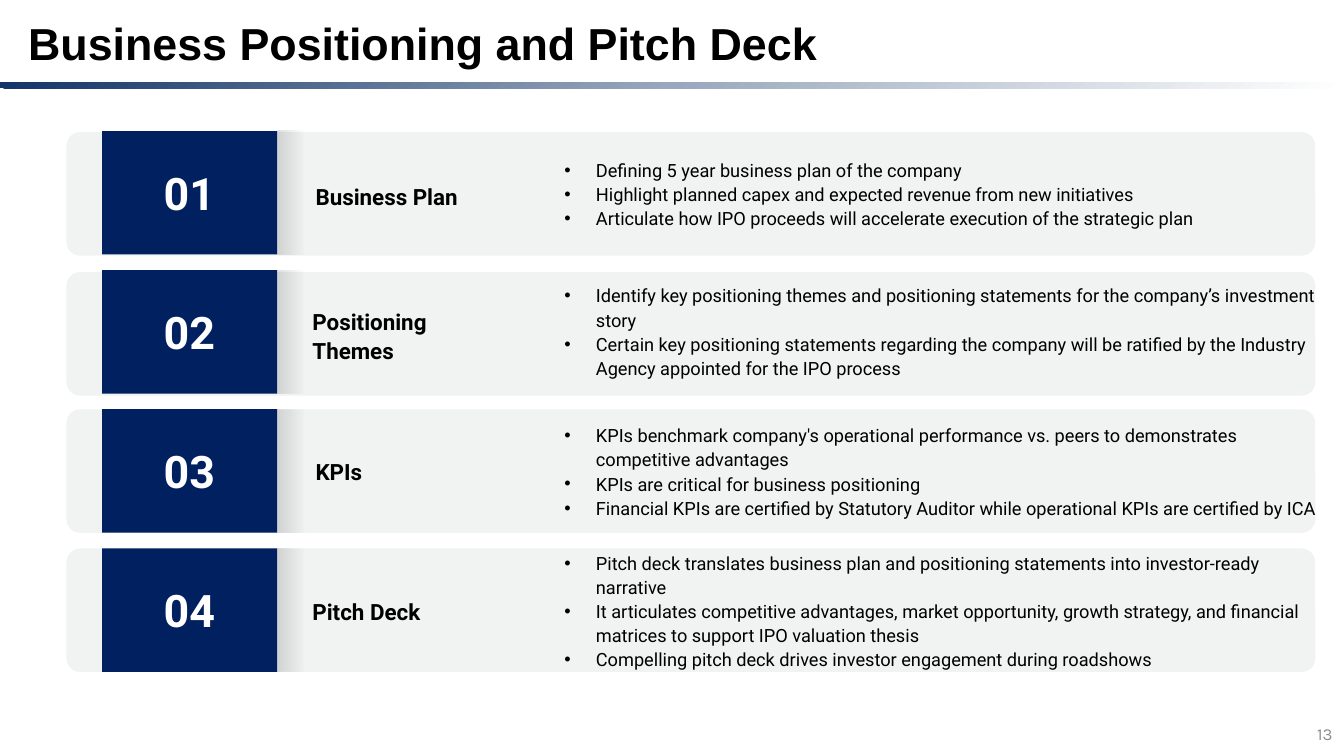
from dataclasses import dataclass
from typing import Optional

import pptx
import pptx.dml.color
import pptx.enum.shapes
import pptx.enum.text
import pptx.oxml
import pptx.oxml.ns
import pptx.util
from lxml import etree

Pt = pptx.util.Pt
RGBColor = pptx.dml.color.RGBColor
Shapes = pptx.enum.shapes.MSO_SHAPE
Align = pptx.enum.text.PP_ALIGN
Anchor = pptx.enum.text.MSO_ANCHOR
qn = pptx.oxml.ns.qn

BLACK = RGBColor(0x00, 0x00, 0x00)
WHITE = RGBColor(0xFF, 0xFF, 0xFF)
NAVY = RGBColor(0x00, 0x20, 0x60)
CARD_GREY = RGBColor(0xF1, 0xF2, 0xF2)
PAGE_GREY = RGBColor(0x8C, 0x8C, 0x8C)
RULE_START = RGBColor(0x13, 0x34, 0x67)
RULE_MIDDLE = RGBColor(0x99, 0xA8, 0xBD)

SLIDE_WIDTH, SLIDE_HEIGHT = 960, 540
FIRST_BADGE_TOP, ROW_PITCH, ROW_HEIGHT = 93.6, 99.36, 88.2
BULLET_INDENT = 22.5


@dataclass
class Box:
    left: float
    top: float
    width: float
    height: float

    def lengths(self) -> list:
        return [Pt(v) for v in (self.left, self.top, self.width, self.height)]


@dataclass
class Style:
    size: float
    color: RGBColor = BLACK
    font: str = "Roboto"
    bold: bool = False
    align: Align = Align.LEFT
    spacing: Optional[float] = None
    bulleted: bool = False
    wrap: bool = True
    inset: bool = False


@dataclass
class Stop:
    position: int
    color: RGBColor
    opacity: int = 100


@dataclass
class Topic:
    heading: str
    card_top: float
    heading_box: Box
    points_top: float
    points: list[str]


TITLE = Style(32, font="Arial", bold=True, inset=True)
NUMBER = Style(32, WHITE, bold=True, align=Align.CENTER, wrap=False)
HEADING = Style(16, bold=True, spacing=1.1)
POINTS = Style(13, spacing=1.1, bulleted=True)
PAGE = Style(12, PAGE_GREY, "Karla", align=Align.RIGHT, inset=True)

TOPICS = [
    Topic("Business Plan", 94.4, Box(225.4, 121.8, 127.4, 36), 120.2, [
        "Defining 5 year business plan of the company",
        "Highlight planned capex and expected revenue from new initiatives",
        "Articulate how IPO proceeds will accelerate execution of the strategic plan",
    ]),
    Topic("Positioning Themes", 194.4, Box(223.2, 221, 121.7, 36), 218.2, [
        "Identify key positioning themes and positioning statements for the "
        "company’s investment story",
        "Certain key positioning statements regarding the company will be ratified "
        "by the Industry Agency appointed for the IPO process",
    ]),
    Topic("KPIs", 292.4, Box(225.4, 317.6, 170.6, 36), 318.2, [
        "KPIs benchmark company's operational performance vs. peers to demonstrates "
        "competitive advantages",
        "KPIs are critical for business positioning",
        "Financial KPIs are certified by Statutory Auditor while operational KPIs "
        "are certified by ICA",
    ]),
    Topic("Pitch Deck", 391.8, Box(223.2, 417.6, 170.6, 36), 417.6, [
        "Pitch deck translates business plan and positioning statements into "
        "investor-ready narrative",
        "It articulates competitive advantages, market opportunity, growth strategy, "
        "and financial matrices to support IPO valuation thesis",
        "Compelling pitch deck drives investor engagement during roadshows",
    ]),
]


def add_block(slide, box: Box, color: Optional[RGBColor] = None, kind=Shapes.RECTANGLE):
    block = slide.shapes.add_shape(kind, *box.lengths())
    block.shadow.inherit = False
    block.line.fill.background()
    if color is not None:
        block.fill.solid()
        block.fill.fore_color.rgb = color
    return block


def add_gradient(slide, box: Box, stops: list[Stop], angle: int) -> None:
    block = add_block(slide, box)
    gradient = etree.Element(qn("a:gradFill"), rotWithShape="1")
    stop_list = etree.SubElement(gradient, qn("a:gsLst"))
    for stop in stops:
        mark = etree.SubElement(stop_list, qn("a:gs"), pos=str(stop.position * 1000))
        color = etree.SubElement(mark, qn("a:srgbClr"), val=str(stop.color))
        if stop.opacity < 100:
            etree.SubElement(color, qn("a:alpha"), val=str(stop.opacity * 1000))
    etree.SubElement(gradient, qn("a:lin"), ang=str(angle * 60000), scaled="0")
    block.element.spPr.find(qn("a:prstGeom")).addnext(gradient)


def add_bullet(paragraph) -> None:
    properties = paragraph._p.get_or_add_pPr()
    properties.set("marL", str(Pt(BULLET_INDENT)))
    properties.set("indent", str(-Pt(BULLET_INDENT)))
    etree.SubElement(properties, qn("a:buFont"), typeface="Arial")
    etree.SubElement(properties, qn("a:buChar"), char="•")


def add_text(slide, box: Box, lines: list[str], style: Style) -> None:
    frame = slide.shapes.add_textbox(*box.lengths()).text_frame
    frame.word_wrap = style.wrap
    frame.vertical_anchor = Anchor.MIDDLE
    if not style.inset:
        frame.margin_left = frame.margin_right = Pt(0)
        frame.margin_top = frame.margin_bottom = Pt(0)
    for index, line in enumerate(lines):
        paragraph = frame.add_paragraph() if index else frame.paragraphs[0]
        if style.bulleted:
            add_bullet(paragraph)
        paragraph.alignment = style.align
        if style.spacing:
            paragraph.line_spacing = style.spacing
        run = paragraph.add_run()
        run.text = line
        run.font.name = style.font
        run.font.size = Pt(style.size)
        run.font.bold = style.bold
        run.font.color.rgb = style.color


def add_topic(slide, index: int, topic: Topic) -> None:
    badge_top = FIRST_BADGE_TOP + index * ROW_PITCH
    card = add_block(slide, Box(47.5, topic.card_top, 892, ROW_HEIGHT), CARD_GREY,
                     Shapes.ROUNDED_RECTANGLE)
    card.adjustments[0] = 0.11
    # Soft shade to the right of the number badge
    add_gradient(slide, Box(198, badge_top, 21.6, ROW_HEIGHT),
                 [Stop(0, BLACK, 13), Stop(90, BLACK, 0)], 0)
    add_block(slide, Box(73, badge_top, 125, ROW_HEIGHT), NAVY)
    add_text(slide, Box(100.8, badge_top + 14.4, 69.1, 59), [f"{index + 1:02}"], NUMBER)
    add_text(slide, topic.heading_box, [topic.heading], HEADING)
    add_text(slide, Box(403.2, topic.points_top, 537, 36), topic.points, POINTS)


def main() -> None:
    deck = pptx.Presentation()
    deck.slide_width, deck.slide_height = Pt(SLIDE_WIDTH), Pt(SLIDE_HEIGHT)
    slide = deck.slides.add_slide(deck.slide_layouts[6])

    # Title and the rule below it
    add_text(slide, Box(13, 2.9, 828, 54.7), ["Business Positioning and Pitch Deck"], TITLE)
    add_gradient(slide, Box(0, 58.6, SLIDE_WIDTH, 4.5),
                 [Stop(0, RULE_START), Stop(50, RULE_MIDDLE), Stop(100, WHITE)], 45)

    # Numbered topics
    for index, topic in enumerate(TOPICS):
        add_topic(slide, index, topic)

    # Page number
    add_text(slide, Box(743, 509.8, 216, 28.8), ["13"], PAGE)
    deck.save("out.pptx")


if __name__ == "__main__":
    main()
